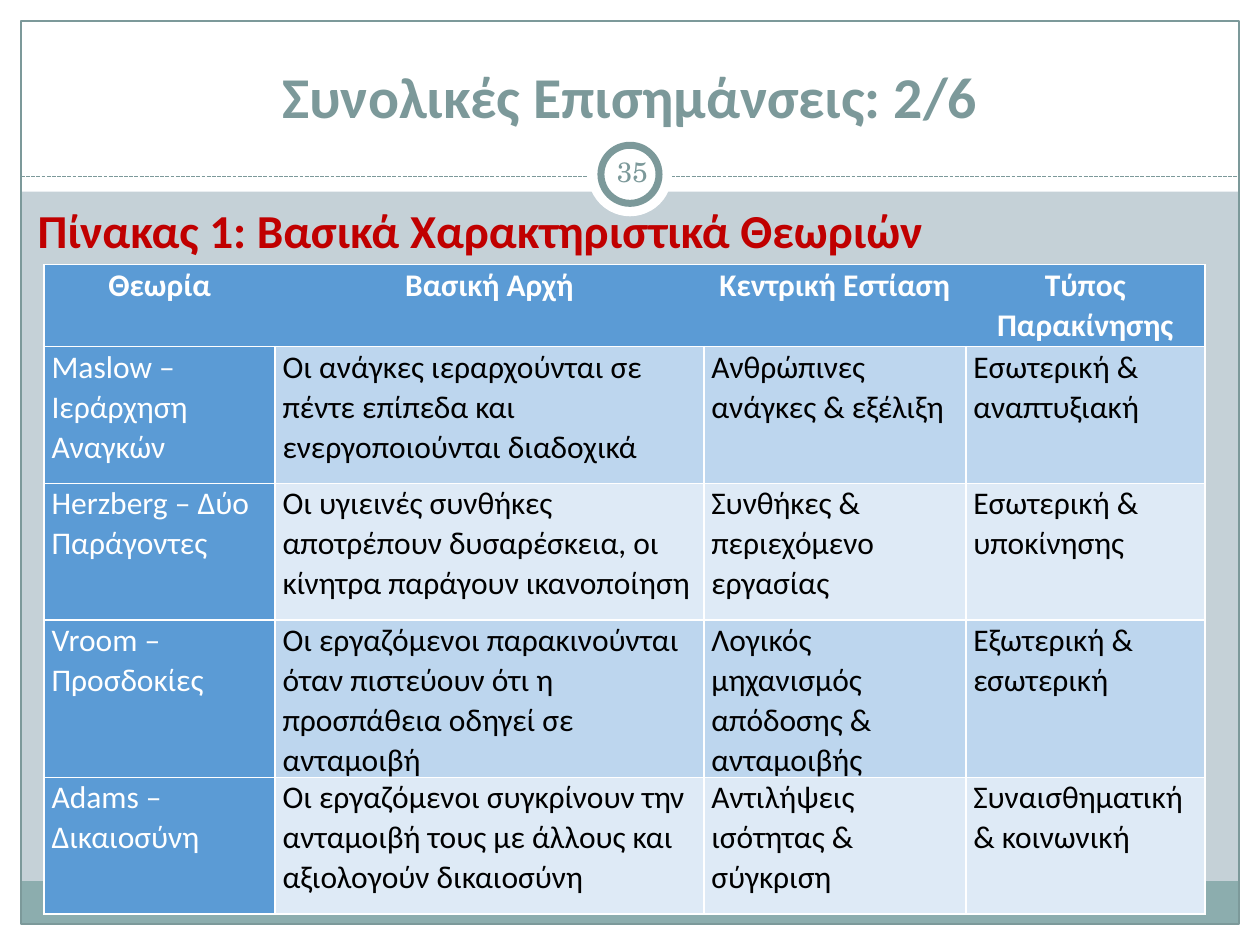
from typing import NamedTuple

from lxml.etree import SubElement
from pptx import Presentation
from pptx.dml.color import RGBColor
from pptx.enum.dml import MSO_LINE
from pptx.enum.shapes import MSO_CONNECTOR, MSO_SHAPE
from pptx.enum.text import MSO_ANCHOR, PP_ALIGN
from pptx.oxml import parse_xml
from pptx.oxml.ns import nsdecls, qn
from pptx.util import Pt

COLORS = {
    "background": "C5D1D7",
    "white": "FFFFFF",
    "black": "000000",
    "accent": "7C999A",
    "footer": "8CADAE",
    "caption": "C00000",
    "header": "5B9BD5",
    "band_dark": "BDD6EE",
    "band_light": "DEEAF6",
}
WIDTH, HEIGHT, MARGIN = 720, 540, 12
FRAME_WIDTH, FRAME_HEIGHT = WIDTH - 2 * MARGIN, HEIGHT - 2 * MARGIN
DIVIDER_TOP = 100.8


class Panel(NamedTuple):
    left: float
    top: float
    width: float
    height: float
    fill: str | None = "white"
    line: str | None = None
    line_width: float = 0.75
    kind: MSO_SHAPE = MSO_SHAPE.RECTANGLE


class Label(NamedTuple):
    text: str
    left: float
    top: float
    width: float
    height: float
    font: dict
    align: PP_ALIGN = PP_ALIGN.LEFT
    anchor: MSO_ANCHOR = MSO_ANCHOR.TOP
    inset: tuple[float, float] = (7.2, 3.6)


PANELS = [
    # White margins and title band
    Panel(0, HEIGHT - MARGIN, WIDTH, MARGIN),
    Panel(0, 0, WIDTH, 109.6),
    Panel(0, 0, MARGIN, HEIGHT),
    Panel(WIDTH - MARGIN, 0, MARGIN, HEIGHT),
    # Footer strip and frame
    Panel(MARGIN, 503.5, FRAME_WIDTH, 24.5, "footer"),
    Panel(MARGIN, MARGIN, FRAME_WIDTH, FRAME_HEIGHT, None, "accent"),
]
BADGE = [
    Panel(336, 75.6, 48, 48, kind=MSO_SHAPE.OVAL),
    Panel(343.4, 83, 33.2, 33.2, "white", "accent", 4, MSO_SHAPE.OVAL),
]
LABELS = [
    Label("Πίνακας 1: Βασικά Χαρακτηριστικά Θεωριών", 14.4, 111.6, 692, 34.6,
          {"name": "Calibri", "size": Pt(27), "bold": True, "color": "caption"}),
    Label("35", 343.4, 80.6, 36, 34.6,
          {"name": "TeX Gyre Schola", "size": Pt(16), "color": "accent"},
          PP_ALIGN.CENTER, MSO_ANCHOR.MIDDLE, (3.6, 3.6)),
    Label("Συνολικές Επισημάνσεις: 2/6", 24, 18, 672, 59.8,
          {"name": "Calibri", "size": Pt(33), "bold": True, "color": "accent"},
          PP_ALIGN.CENTER, MSO_ANCHOR.BOTTOM),
]
COLUMN_WIDTHS = [132, 245, 149.7, 136.6]
ROW_HEIGHTS = [46.8] + [78.2] * 4
THEORIES = [
    ["Θεωρία", "Βασική Αρχή", "Κεντρική Εστίαση", "Τύπος Παρακίνησης"],
    ["Maslow – Ιεράρχηση Αναγκών",
     "Οι ανάγκες ιεραρχούνται σε πέντε επίπεδα και ενεργοποιούνται διαδοχικά",
     "Ανθρώπινες ανάγκες & εξέλιξη", "Εσωτερική & αναπτυξιακή"],
    ["Herzberg – Δύο Παράγοντες",
     "Οι υγιεινές συνθήκες αποτρέπουν δυσαρέσκεια, οι κίνητρα παράγουν ικανοποίηση",
     "Συνθήκες & περιεχόμενο εργασίας", "Εσωτερική & υποκίνησης"],
    ["Vroom – Προσδοκίες",
     "Οι εργαζόμενοι παρακινούνται όταν πιστεύουν ότι η προσπάθεια οδηγεί σε ανταμοιβή",
     "Λογικός μηχανισμός απόδοσης & ανταμοιβής", "Εξωτερική & εσωτερική"],
    ["Adams – Δικαιοσύνη",
     "Οι εργαζόμενοι συγκρίνουν την ανταμοιβή τους με άλλους και αξιολογούν δικαιοσύνη",
     "Αντιλήψεις ισότητας & σύγκριση", "Συναισθηματική & κοινωνική"],
]


def rgb(name: str) -> RGBColor:
    return RGBColor.from_string(COLORS[name])


def apply_font(font, values: dict) -> None:
    for key, value in values.items():
        if key == "color":
            font.color.rgb = rgb(value)
        else:
            setattr(font, key, value)


def draw_panel(slide, panel: Panel) -> None:
    shape = slide.shapes.add_shape(panel.kind, *map(Pt, panel[:4]))
    shape.shadow.inherit = False
    if panel.fill:
        shape.fill.solid()
        shape.fill.fore_color.rgb = rgb(panel.fill)
    else:
        shape.fill.background()
    if panel.line:
        shape.line.color.rgb = rgb(panel.line)
        shape.line.width = Pt(panel.line_width)
    else:
        shape.line.fill.background()


def draw_divider(slide) -> None:
    line = slide.shapes.add_connector(MSO_CONNECTOR.STRAIGHT, Pt(MARGIN), Pt(DIVIDER_TOP),
                                      Pt(WIDTH - MARGIN), Pt(DIVIDER_TOP))
    line.line.color.rgb = rgb("accent")
    line.line.width = Pt(0.75)
    line.line.dash_style = MSO_LINE.SQUARE_DOT
    SubElement(line._element.spPr, qn("a:effectLst"))


def draw_label(slide, label: Label) -> None:
    frame = slide.shapes.add_textbox(*map(Pt, label[1:5])).text_frame
    frame.word_wrap = True
    frame.vertical_anchor = label.anchor
    frame.margin_left = frame.margin_right = Pt(label.inset[0])
    frame.margin_top = frame.margin_bottom = Pt(label.inset[1])
    paragraph = frame.paragraphs[0]
    paragraph.alignment = label.align
    run = paragraph.add_run()
    run.text = label.text
    apply_font(run.font, label.font)


def set_borders(cell, hidden: str) -> None:
    """White borders all round, except the sides listed in hidden."""
    properties = cell._tc.get_or_add_tcPr()
    for index, side in enumerate("LRTB"):
        paint = ("<a:noFill/>" if side in hidden else
                 f'<a:solidFill><a:srgbClr val="{COLORS["white"]}"/></a:solidFill>')
        properties.insert(index, parse_xml(
            f'<a:ln{side} {nsdecls("a")} w="{Pt(1)}">{paint}</a:ln{side}>'))


def fill_cell(cell, text: str, row: int, column: int) -> None:
    is_header, is_label = row == 0, column == 0
    band = "band_dark" if row % 2 else "band_light"
    cell.fill.solid()
    cell.fill.fore_color.rgb = rgb("header" if is_header or is_label else band)
    cell.margin_left = cell.margin_right = Pt(4.3)
    cell.margin_top = cell.margin_bottom = 0
    paragraph = cell.text_frame.paragraphs[0]
    paragraph.alignment = PP_ALIGN.CENTER if is_header else PP_ALIGN.LEFT
    paragraph.line_spacing = 1.04
    run = paragraph.add_run()
    run.text = text
    apply_font(run.font, {"name": "Calibri", "size": Pt(18), "bold": is_header,
                          "color": "white" if is_header or is_label else "black"})
    # The header row has no inner vertical lines
    last = len(COLUMN_WIDTHS) - 1
    hidden = ("" if is_label else "L") + ("" if column == last else "R")
    set_borders(cell, hidden if is_header else "")


def draw_table(slide) -> None:
    table = slide.shapes.add_table(len(ROW_HEIGHTS), len(COLUMN_WIDTHS), Pt(25.2), Pt(151.2),
                                   Pt(sum(COLUMN_WIDTHS)), Pt(sum(ROW_HEIGHTS))).table
    table.first_row = table.horz_banding = False
    for column, width in zip(table.columns, COLUMN_WIDTHS):
        column.width = Pt(width)
    for row, height in zip(table.rows, ROW_HEIGHTS):
        row.height = Pt(height)
    for row, texts in enumerate(THEORIES):
        for column, text in enumerate(texts):
            fill_cell(table.cell(row, column), text, row, column)


def main() -> None:
    presentation = Presentation()
    presentation.slide_width, presentation.slide_height = Pt(WIDTH), Pt(HEIGHT)
    slide = presentation.slides.add_slide(presentation.slide_layouts[6])
    slide.background.fill.solid()
    slide.background.fill.fore_color.rgb = rgb("background")

    # Backdrop, divider and page badge
    for panel in PANELS:
        draw_panel(slide, panel)
    draw_divider(slide)
    for panel in BADGE:
        draw_panel(slide, panel)

    # Texts and table
    for label in LABELS:
        draw_label(slide, label)
    draw_table(slide)
    presentation.save("out.pptx")


if __name__ == "__main__":
    main()
